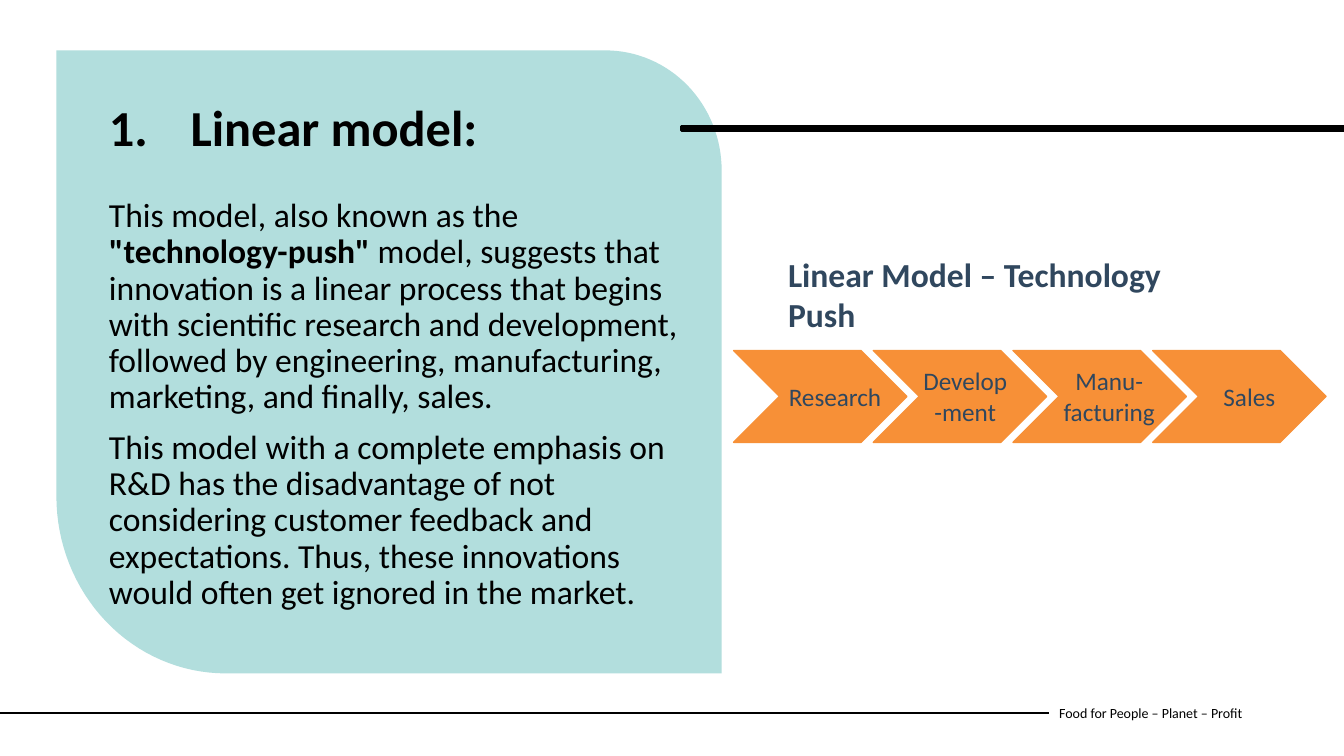
"""Builds the slide on the linear model of innovation."""
import math

from lxml import etree
from pptx import Presentation
from pptx import util as u
from pptx.dml.color import RGBColor
from pptx.enum import shapes, text
from pptx.oxml import ns

BLACK = RGBColor(0x00, 0x00, 0x00)
TEAL = RGBColor(0xB2, 0xDE, 0xDD)
ORANGE = RGBColor(0xF7, 0x90, 0x37)
NAVY = RGBColor(0x30, 0x47, 0x5E)


def quarter_arc(center, radii, start, steps=32):
    """Return the points of a clockwise quarter ellipse, from a start angle in degrees."""
    angles = [math.radians(start + 90 * i / steps) for i in range(steps + 1)]
    return [(center[0] + radii[0] * math.cos(a), center[1] + radii[1] * math.sin(a))
            for a in angles]


class ModelSlide:
    """Holds the style and the current slide, with a method for each kind of element."""

    def __init__(self, deck, font="Calibri"):
        """Add a title and content slide to the deck."""
        self.font = font
        self.slide = deck.slides.add_slide(deck.slide_layouts[1])

    def apply(self, target, values):
        """Set every named attribute of the target."""
        for name, value in values.items():
            setattr(target, name, value)

    def paint(self, shape, color, weight=None):
        """Fill a shape and outline it only when a weight is given."""
        shape.shadow.inherit = False
        shape.fill.solid()
        shape.fill.fore_color.rgb = color
        if weight is None:
            shape.line.fill.background()
        else:
            shape.line.color.rgb = color
            shape.line.width = u.Pt(weight)

    def typeset(self, frame, paragraphs, size, color, layout):
        """Set paragraphs, each a list of (wording, bold) runs."""
        for i, runs in enumerate(paragraphs):
            paragraph = frame.paragraphs[0] if i == 0 else frame.add_paragraph()
            self.apply(paragraph, layout)
            for wording, bold in runs:
                run = paragraph.add_run()
                run.text = wording
                self.apply(run.font, {"name": self.font, "size": u.Pt(size), "bold": bold})
                run.font.color.rgb = color

    def label(self, box, paragraphs, size, color, bold=False,
              align=text.PP_ALIGN.LEFT, anchor=text.MSO_ANCHOR.TOP):
        """Add a wrapped text box."""
        frame = self.slide.shapes.add_textbox(*map(u.Pt, box)).text_frame
        self.apply(frame, {"word_wrap": True, "vertical_anchor": anchor})
        self.typeset(frame, [[(p, bold)] for p in paragraphs], size, color,
                     {"alignment": align})

    def preset(self, kind, box, color, weight):
        """Add a preset shape."""
        self.paint(self.slide.shapes.add_shape(kind, *map(u.Pt, box)), color, weight)

    def outline(self, points, color):
        """Add a closed freeform."""
        start, *rest = [(u.Pt(x), u.Pt(y)) for x, y in points]
        builder = self.slide.shapes.build_freeform(*start)
        builder.add_line_segments(rest, close=True)
        self.paint(builder.convert_to_shape(), color)

    def rule(self, start, end, color, weight):
        """Add a straight line."""
        line = self.slide.shapes.add_connector(
            shapes.MSO_CONNECTOR.STRAIGHT, *map(u.Pt, start + end))
        line.line.color.rgb = color
        line.line.width = u.Pt(weight)
        etree.SubElement(line.element.spPr, ns.qn("a:effectLst"))

    def placeholder(self, index, box, paragraphs, size, indent=0, numbered=False):
        """Move a template placeholder to the front and fill it."""
        holder = self.slide.placeholders[index]
        holder.element.getparent().append(holder.element)
        self.apply(holder, dict(zip(("left", "top", "width", "height"), map(u.Pt, box))))
        frame = holder.text_frame
        self.apply(frame, {"word_wrap": True, "auto_size": text.MSO_AUTO_SIZE.NONE,
                           "vertical_anchor": text.MSO_ANCHOR.TOP})
        self.typeset(frame, paragraphs, size, BLACK,
                     {"alignment": text.PP_ALIGN.LEFT, "line_spacing": 0.9,
                      "space_before": u.Pt(10), "space_after": u.Pt(0)})
        for paragraph in frame.paragraphs:
            properties = paragraph._p.get_or_add_pPr()
            properties.set("marL", str(int(u.Pt(indent))))
            properties.set("indent", str(-int(u.Pt(indent))))
            if numbered:
                etree.SubElement(properties, ns.qn("a:buFont"), typeface="+mj-lt")
                etree.SubElement(properties, ns.qn("a:buAutoNum"), type="arabicPeriod")
            else:
                etree.SubElement(properties, ns.qn("a:buNone"))


def main():
    """Build and save the slide."""
    deck = Presentation()
    deck.slide_width, deck.slide_height = u.Pt(960), u.Pt(540)
    page = ModelSlide(deck)

    page.label((749.5, 494.6, 196.6, 28.8), ["Food for People – Planet – Profit"],
               10, BLACK, anchor=text.MSO_ANCHOR.MIDDLE)
    page.rule((0, 509), (749.5, 509), BLACK, 1.5)

    left, top, right, bottom = 40.3, 36, 515.5, 481
    upper, lower = (83, 85.7), (121, 126.7)
    page.outline(
        [(right, bottom)]
        + quarter_arc((left + lower[0], bottom - lower[1]), lower, 90)
        + [(left, top)]
        + quarter_arc((right - upper[0], top + upper[1]), upper, 270), TEAL)
    page.preset(shapes.MSO_SHAPE.RECTANGLE, (486.7, 90.4, 473.3, 2.9), BLACK, 1.93)

    page.placeholder(1, (70.6, 138.2, 425.5, 238.3), [
        [("This model, also known as the ", False),
         ("\"technology-push\" ", True),
         ("model, suggests that innovation is a linear process that begins with scientific "
          "research and development, followed by engineering, manufacturing, marketing, "
          "and finally, sales.", False)],
        [("This model with a complete emphasis on R&D has the disadvantage of not considering "
          "customer feedback and expectations. Thus, these innovations would often get "
          "ignored in the market.", False)]], 24)
    page.placeholder(0, (70.6, 69.8, 393.1, 78.5), [[("Linear model:", True)]],
                     36, indent=58.3, numbered=True)

    stages = [(["Research"], 1, 555.8, 81.4), (["Develop -ment"], 2, 650.2, 78.5),
              (["Manu-", "facturing"], 2, 750.2, 84.2), (["Sales"], 1, 850.3, 84.2)]
    middle, step = 283.2, 99.8
    for i in range(len(stages)):
        page.preset(shapes.MSO_SHAPE.CHEVRON,
                    (524 + i * step, middle - 32.8, 123.8, 65.6), ORANGE, 1)
    for wording, lines, x, width in stages:
        height = 7.2 + 22 * lines
        page.label((x, middle - height / 2, width, height), wording, 18, NAVY,
                   align=text.PP_ALIGN.CENTER)
    page.label((555.8, 177.8, 334, 36), ["Linear Model – Technology Push"], 24, NAVY, bold=True)

    deck.save("out.pptx")


if __name__ == "__main__":
    main()
